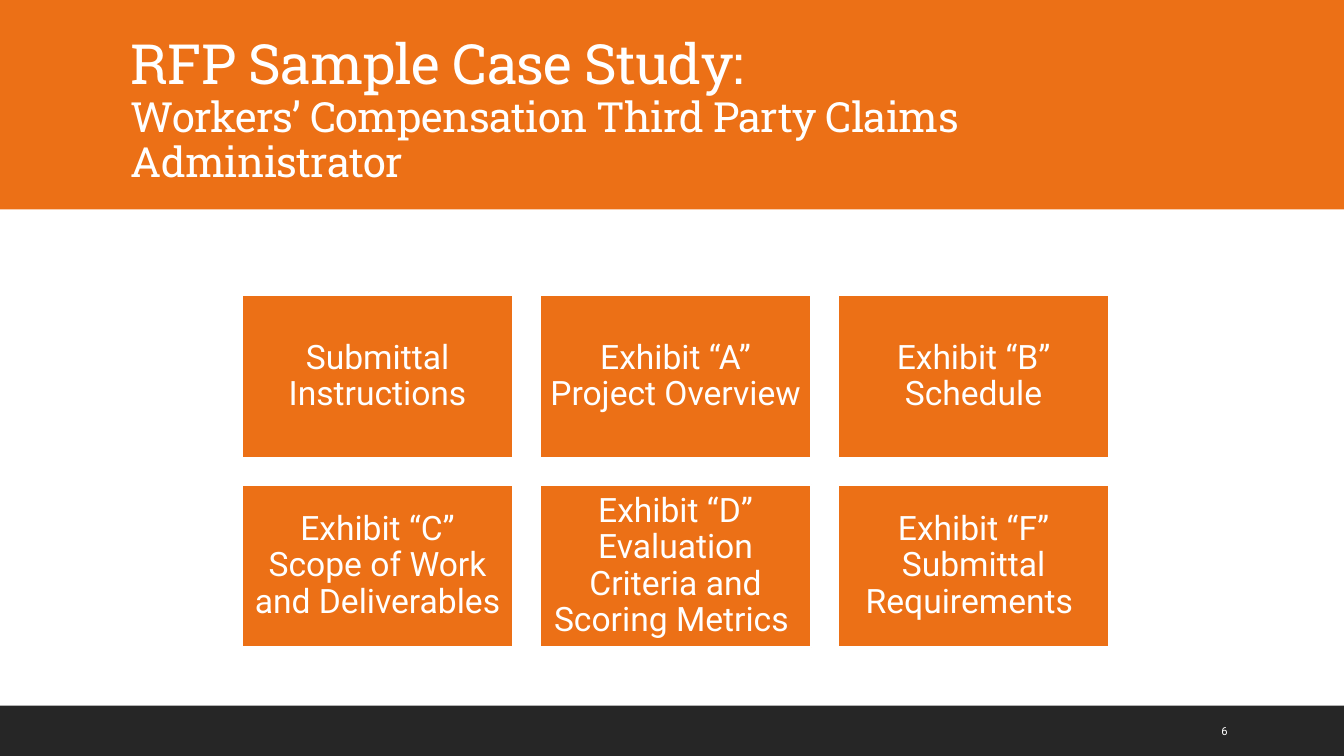
from pptx import Presentation
from pptx import util as u
from pptx.dml.color import RGBColor
from pptx.enum import shapes, text

Cm = u.Cm
ORANGE, DARK, WHITE = "EC7016", "262626", "FFFFFF"
WIDTH, HEIGHT = 33.87, 19.05
CARDS = [
    "Submittal Instructions",
    "Exhibit “A” Project Overview",
    "Exhibit “B” Schedule",
    "Exhibit “C” Scope of Work and Deliverables",
    "Exhibit “D” Evaluation Criteria and Scoring Metrics ",
    "Exhibit “F” Submittal Requirements ",
]


def rgb(value):
    """Turn a hex string into a colour."""
    return RGBColor.from_string(value)


def add_rect(s, x, y, w, h, fill, line=None):
    """Add a flat rectangle, outlined if a line colour is given."""
    sp = s.shapes.add_shape(shapes.MSO_SHAPE.RECTANGLE, Cm(x), Cm(y), Cm(w), Cm(h))
    sp.shadow.inherit = False
    sp.fill.solid()
    sp.fill.fore_color.rgb = rgb(fill)
    if line:
        sp.line.color.rgb = rgb(line)
        sp.line.width = u.Pt(1.25)
    else:
        sp.line.fill.background()
    return sp


def set_font(p, name, size=None):
    """Give a paragraph its white font."""
    p.font.name = name
    p.font.color.rgb = rgb(WHITE)
    if size:
        p.font.size = u.Pt(size)


def add_text(s, x, y, w, h):
    """Add a wrapping, vertically centred text box and return its paragraph."""
    tf = s.shapes.add_textbox(Cm(x), Cm(y), Cm(w), Cm(h)).text_frame
    tf.word_wrap = True
    tf.vertical_anchor = text.MSO_ANCHOR.MIDDLE
    return tf.paragraphs[0]


def add_header(s, x, y, w, h):
    """Draw the title band with its two-size heading."""
    add_rect(s, x, y, w, h, ORANGE)
    p = add_text(s, x + 3.05, y + 0.79, 27.94, 4.04)
    p.line_spacing = 0.9
    set_font(p, "Roboto Slab")
    title = p.add_run()
    title.text = "RFP Sample Case Study:"
    p.add_line_break()
    subtitle = p.add_run()
    subtitle.text = "Workers’ Compensation Third Party Claims Administrator"
    for r, size in ((title, 39.6), (subtitle, 29.7)):
        r.font.size = u.Pt(size)
        r._r.get_or_add_rPr().set("spc", "-50")


def add_card(s, x, y, w, h, label):
    """Draw one labelled card."""
    tf = add_rect(s, x, y, w, h, ORANGE, WHITE).text_frame
    tf.word_wrap = True
    tf.vertical_anchor = text.MSO_ANCHOR.MIDDLE
    tf.margin_left = tf.margin_right = tf.margin_top = tf.margin_bottom = Cm(0.25)
    p = tf.paragraphs[0]
    p.text = label
    p.alignment = text.PP_ALIGN.CENTER
    p.line_spacing = 0.9
    set_font(p, "Roboto", 24)


def add_cards(s, x, y, w, h, cols=3, gap=0.68):
    """Lay the cards out in an even grid."""
    rows = len(CARDS) // cols
    card_w = (w - gap * (cols - 1)) / cols
    card_h = (h - gap * (rows - 1)) / rows
    for i, label in enumerate(CARDS):
        row, col = divmod(i, cols)
        add_card(s, x + col * (card_w + gap), y + row * (card_h + gap),
                 card_w, card_h, label)


def add_footer(s, x, y, w, h):
    """Draw the dark footer band with the page number."""
    add_rect(s, x, y, w, h, DARK)
    p = add_text(s, x + 30.53, y + 0.13, 2.16, 1.02)
    p.text = "6"
    set_font(p, "Roboto", 8)


def main():
    """Build and save the slide."""
    prs = Presentation()
    prs.slide_width, prs.slide_height = Cm(WIDTH), Cm(HEIGHT)
    s = prs.slides.add_slide(prs.slide_layouts[6])
    s.background.fill.solid()
    s.background.fill.fore_color.rgb = rgb(WHITE)
    add_header(s, 0, 0, WIDTH, 5.28)
    add_cards(s, 6.1, 7.44, 21.85, 8.87)
    add_footer(s, 0, 17.78, WIDTH, 1.27)
    prs.save("out.pptx")


if __name__ == "__main__":
    main()
